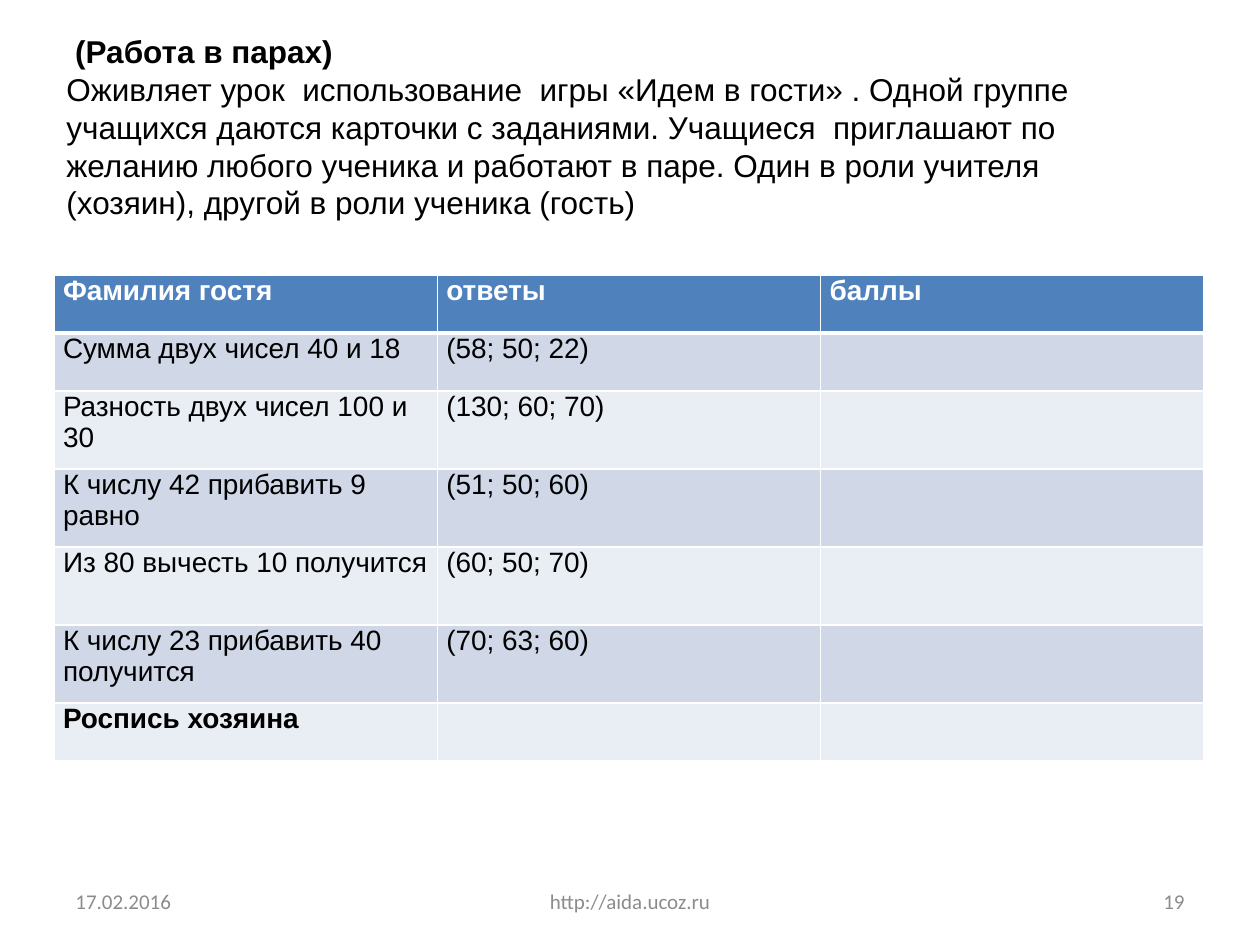
from lxml import etree
from pptx import Presentation
from pptx import util as u
from pptx.dml.color import RGBColor
from pptx.enum import text as t
from pptx.oxml import ns

PX = 914400 / 126
BLACK = RGBColor(0x00, 0x00, 0x00)
WHITE = RGBColor(0xFF, 0xFF, 0xFF)
GRAY = RGBColor(0x8C, 0x8C, 0x8C)
HEADER_BLUE = RGBColor(0x4F, 0x81, 0xBD)
BAND_DARK = RGBColor(0xD0, 0xD8, 0xE8)
BAND_LIGHT = RGBColor(0xE9, 0xED, 0xF4)

INTRO_HEADING = " (Работа в парах)"
INTRO_BODY = (
    "Оживляет урок  использование  игры «Идем в гости» . Одной группе "
    "учащихся даются карточки с заданиями. Учащиеся  приглашают по "
    "желанию любого ученика и работают в паре. Один в роли учителя "
    "(хозяин), другой в роли ученика (гость)"
)
TASKS = [
    ("Фамилия гостя", "ответы", "баллы"),
    ("Сумма двух чисел 40 и 18", "(58; 50; 22)", ""),
    ("Разность двух чисел 100 и 30", "(130; 60; 70)", ""),
    ("К числу 42 прибавить 9 равно", "(51; 50; 60)", ""),
    ("Из 80 вычесть 10 получится", "(60; 50; 70)", ""),
    ("К числу 23 прибавить 40 получится", "(70; 63; 60)", ""),
    ("Роспись хозяина", "", ""),
]
ROW_HEIGHTS = [58, 58, 78, 78, 78, 78, 58]


def px(length):
    return u.Emu(round(length * PX))


def write(paragraph, words, size=18, font="Arial", color=BLACK, bold=False,
          align=t.PP_ALIGN.LEFT):
    paragraph.alignment = align
    paragraph.font.size = u.Pt(size)
    if words:
        run = paragraph.add_run()
        run.text = words
        run.font.size = u.Pt(size)
        run.font.name = font
        run.font.bold = bold
        run.font.color.rgb = color


def add_frame(slide, left, top, width, height, anchor=t.MSO_ANCHOR.TOP):
    frame = slide.shapes.add_textbox(px(left), px(top), px(width), px(height)).text_frame
    frame.word_wrap = True
    frame.vertical_anchor = anchor
    return frame


def add_borders(cell, bottom_width):
    properties = cell._tc.get_or_add_tcPr()
    widths = {"a:lnL": 1, "a:lnR": 1, "a:lnT": 1, "a:lnB": bottom_width}
    for position, (side, width) in enumerate(widths.items()):
        border = etree.Element(ns.qn(side), w=str(u.Pt(width)))
        fill = etree.SubElement(border, ns.qn("a:solidFill"))
        etree.SubElement(fill, ns.qn("a:srgbClr"), val=str(WHITE))
        properties.insert(position, border)


def add_intro(slide, left, top, width, height):
    frame = add_frame(slide, left, top, width, height)
    write(frame.paragraphs[0], INTRO_HEADING, bold=True)
    write(frame.add_paragraph(), INTRO_BODY)


def add_tasks(slide, left, top, width):
    table = slide.shapes.add_table(len(TASKS), len(TASKS[0]), px(left), px(top),
                                   px(width), px(sum(ROW_HEIGHTS))).table
    for column in table.columns:
        column.width = px(width / len(TASKS[0]))
    for row, (task, height) in enumerate(zip(TASKS, ROW_HEIGHTS)):
        table.rows[row].height = px(height)
        is_header = row == 0
        is_signature = row == len(TASKS) - 1
        band = HEADER_BLUE if is_header else BAND_DARK if row % 2 else BAND_LIGHT
        for column, words in enumerate(task):
            cell = table.cell(row, column)
            cell.margin_left = cell.margin_right = px(9)
            cell.margin_top = cell.margin_bottom = 0
            cell.fill.solid()
            cell.fill.fore_color.rgb = band
            add_borders(cell, 3 if is_header else 1)
            write(cell.text_frame.paragraphs[0], words, size=16,
                  color=WHITE if is_header else BLACK, bold=is_header or is_signature)


def add_footer(slide, left, top, width, height):
    side, middle = 294, 400
    parts = [
        ("17.02.2016", left, side, t.PP_ALIGN.LEFT),
        ("http://aida.ucoz.ru", left + (width - middle) / 2, middle, t.PP_ALIGN.CENTER),
        ("19", left + width - side, side, t.PP_ALIGN.RIGHT),
    ]
    for words, part_left, part_width, align in parts:
        frame = add_frame(slide, part_left, top, part_width, height, t.MSO_ANCHOR.MIDDLE)
        write(frame.paragraphs[0], words, size=12, font="Calibri", color=GRAY, align=align)


def main():
    deck = Presentation()
    deck.slide_width, deck.slide_height = px(1260), px(945)
    slide = deck.slides.add_slide(deck.slide_layouts[6])
    add_tasks(slide, 54, 275, 1150)
    add_footer(slide, 63, 876, 1134, 50)
    add_intro(slide, 54, 26, 1062, 204)
    deck.save("out.pptx")


if __name__ == "__main__":
    main()
